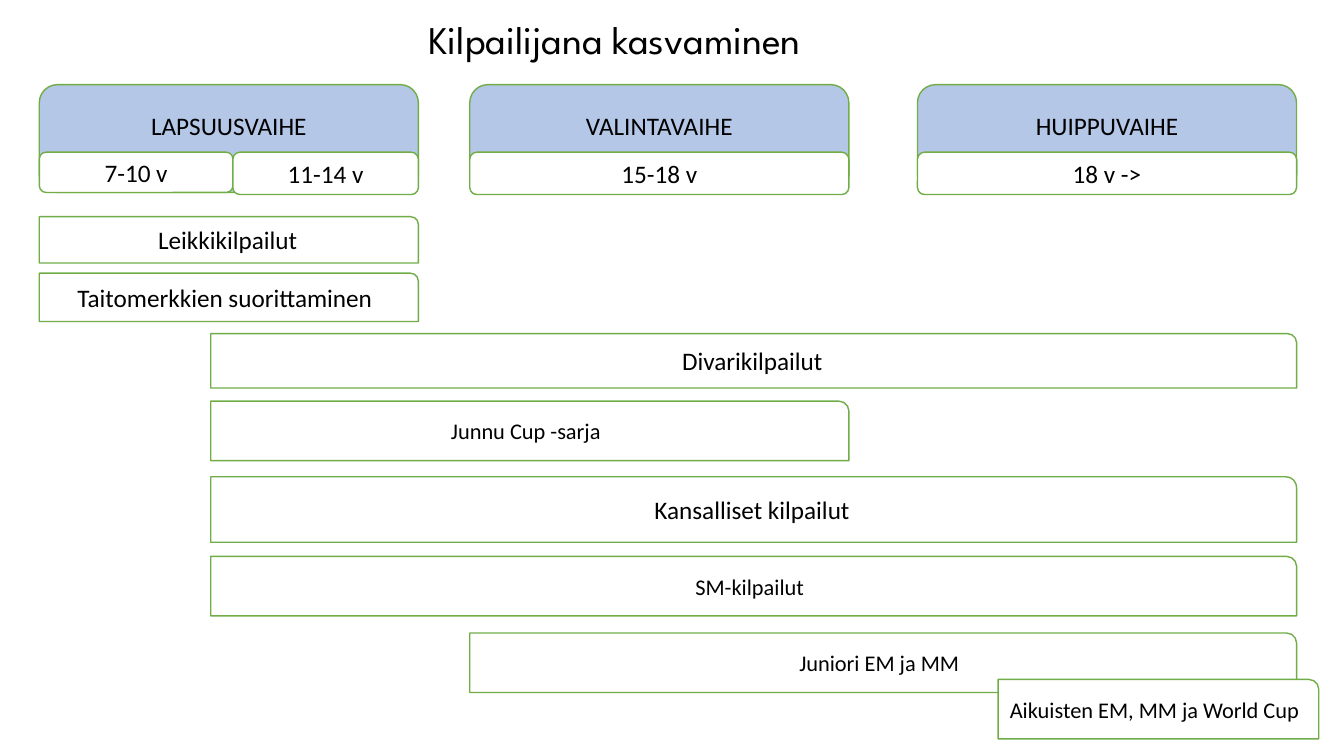
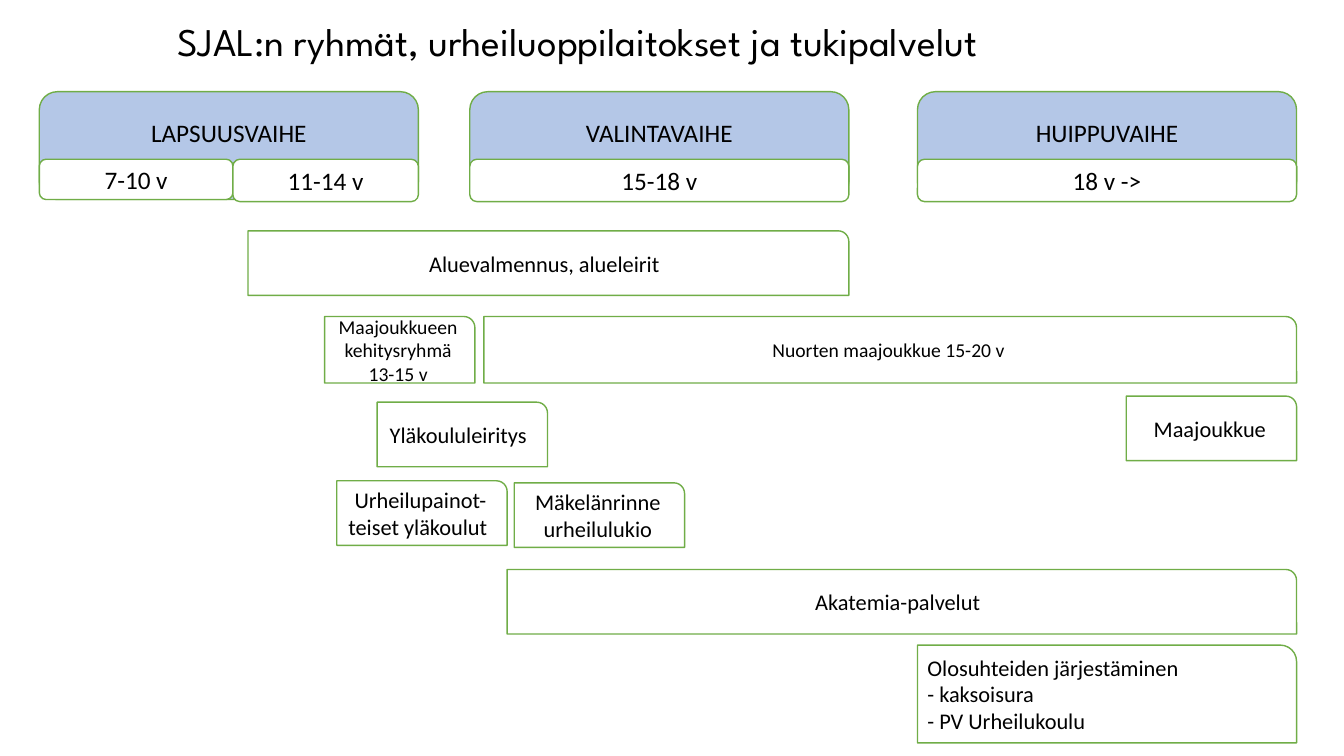
"""Builds two slides that set competitions and support services against an athlete's phases."""
from dataclasses import dataclass

from pptx import Presentation
from pptx.dml.color import RGBColor as Rgb
from pptx.enum.shapes import MSO_SHAPE as Shape
from pptx.enum.text import MSO_ANCHOR as Anchor, MSO_AUTO_SIZE as AutoSize, PP_ALIGN as Align
from pptx.util import Inches, Pt


@dataclass(frozen=True)
class Theme:
    ink: Rgb = Rgb(0x00, 0x00, 0x00)
    paper: Rgb = Rgb(0xFF, 0xFF, 0xFF)
    phase: Rgb = Rgb(0xB4, 0xC7, 0xE7)
    outline: Rgb = Rgb(0x70, 0xAD, 0x47)
    heading_font: str = "League Spartan"
    body_font: str = "Calibri"
    heading: int = 28
    large: int = 18
    medium: int = 16
    small: int = 14


theme = Theme()


def write(frame, wording, size, font, align):
    frame.word_wrap = True
    for number, line in enumerate(wording.split("\n")):
        paragraph = frame.add_paragraph() if number else frame.paragraphs[0]
        paragraph.alignment = align
        run = paragraph.add_run()
        run.text = line
        run.font.size = Pt(size)
        run.font.name = font
        run.font.color.rgb = theme.ink


def add_box(slide, outline, left, right, top, height, wording, size,
            fill=theme.paper, align=Align.CENTER, lift=0.05):
    box = slide.shapes.add_shape(
        outline, Inches(left), Inches(top), Inches(right - left), Inches(height))
    box.shadow.inherit = False
    box.fill.solid()
    box.fill.fore_color.rgb = fill
    box.line.color.rgb = theme.outline
    box.line.width = Pt(1)
    frame = box.text_frame
    frame.vertical_anchor = Anchor.MIDDLE
    frame.margin_bottom = Inches(lift)
    write(frame, wording, size, theme.body_font, align)


phase_width, phase_height = 3.76, 1.07
age_drop, age_height = 0.67, 0.42
child, selection, top_level = 0.39, 4.66, 9.1
child_end, selection_end, top_end = (start + phase_width for start in (child, selection, top_level))
teen, age_split, academy = 2.09, 2.31, 5.03
group_width, group_height = 1.69, 0.64
cup_height = 0.59

phases = [(child, "LAPSUUSVAIHE"), (selection, "VALINTAVAIHE"), (top_level, "HUIPPUVAIHE")]
ages = [
    (child, age_split, 0.4, "7-10 v"),
    (age_split, child_end, age_height, "11-14 v"),
    (selection, selection_end, age_height, "15-18 v"),
    (top_level, top_end, age_height, "18 v ->"),
]

competitions = [
    (child, child_end, 2.15, 0.46, "Leikkikilpailut", theme.large),
    (child, child_end, 2.71, 0.48, "Taitomerkkien suorittaminen ", theme.large),
    (teen, top_end, 3.31, 0.54, "Divarikilpailut", theme.large),
    (teen, selection_end, 3.98, cup_height, "Junnu Cup -sarja ", theme.medium),
    (teen, top_end, 4.73, 0.65, "Kansalliset kilpailut", theme.large),
    (teen, top_end, 5.52, cup_height, "SM-kilpailut ", theme.medium),
    (selection, top_end, 6.28, cup_height, "Juniori EM ja MM ", theme.medium),
    (9.9, 13.08, 6.74, cup_height, "Aikuisten EM, MM ja World Cup ", theme.medium),
]
services = [
    (2.46, selection_end, 2.29, group_height, "Aluevalmennus, alueleirit ", theme.medium),
    (3.22, 4.71, 3.14, 0.66, "Maajoukkueen kehitysryhmä 13-15 v", theme.small),
    (4.8, top_end, 3.14, 0.66, "Nuorten maajoukkue 15-20 v", theme.small),
    (3.74, 3.74 + group_width, 3.99, group_height, "Yläkoululeiritys ", theme.medium),
    (top_end - group_width, top_end, 3.93, group_height, "Maajoukkue", theme.medium),
    (academy - group_width, academy, 4.77, group_height,
     "Urheilupainot-teiset yläkoulut ", theme.medium),
    (5.1, 5.1 + group_width, 4.79, group_height, "Mäkelänrinne\nurheilulukio", theme.medium),
    (academy, top_end, 5.65, group_height, "Akatemia-palvelut ", theme.medium),
    (top_level, top_end, 6.4, 0.97,
     "Olosuhteiden järjestäminen\n- kaksoisura\n- PV Urheilukoulu", theme.medium, Align.LEFT),
]
pages = [
    ("Kilpailijana kasvaminen", (4.15, 0.1, 6.24, 0.57), 0.84, competitions),
    ("SJAL:n ryhmät, urheiluoppilaitokset ja tukipalvelut", (1.66, 0.12, 11.11, 0.57), 0.91, services),
]

deck = Presentation()
deck.slide_width, deck.slide_height = Inches(13.33), Inches(7.5)

for heading, place, phase_top, bars in pages:
    slide = deck.slides.add_slide(deck.slide_layouts[5])
    title = slide.shapes.title
    title.left, title.top, title.width, title.height = map(Inches, place)
    title.text_frame.auto_size = AutoSize.NONE
    title.text_frame.vertical_anchor = Anchor.TOP
    write(title.text_frame, heading, theme.heading, theme.heading_font, Align.LEFT)

    for left, right, top, height, wording, size, *align in bars:
        add_box(slide, Shape.ROUND_1_RECTANGLE, left, right, top, height, wording, size,
                align=align[0] if align else Align.CENTER)
    for left, wording in phases:
        add_box(slide, Shape.ROUNDED_RECTANGLE, left, left + phase_width, phase_top, phase_height,
                wording, theme.large, fill=theme.phase, lift=0.32)
    for left, right, height, wording in ages:
        add_box(slide, Shape.ROUNDED_RECTANGLE, left, right, phase_top + age_drop, height,
                wording, theme.large)

deck.save("out.pptx")
